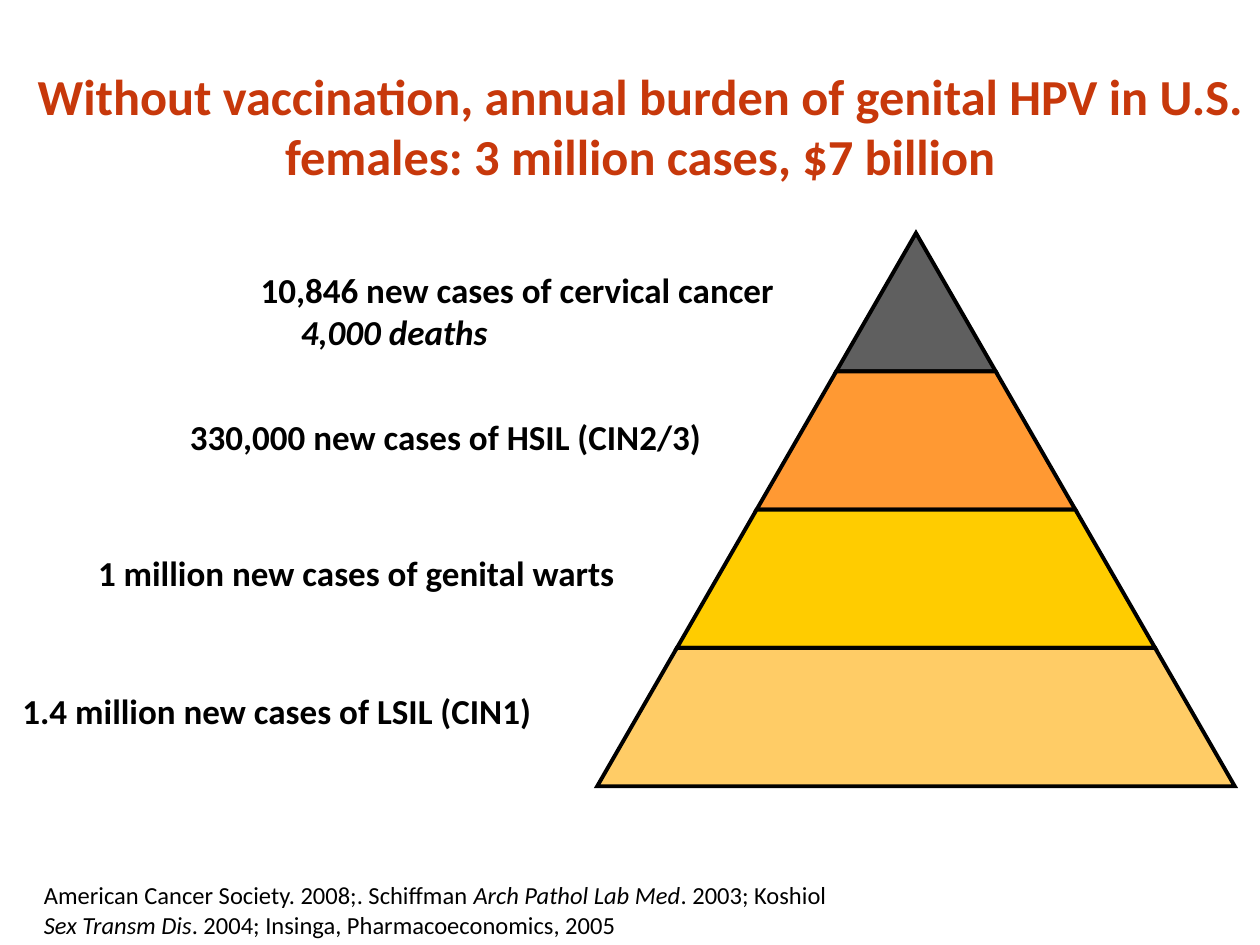
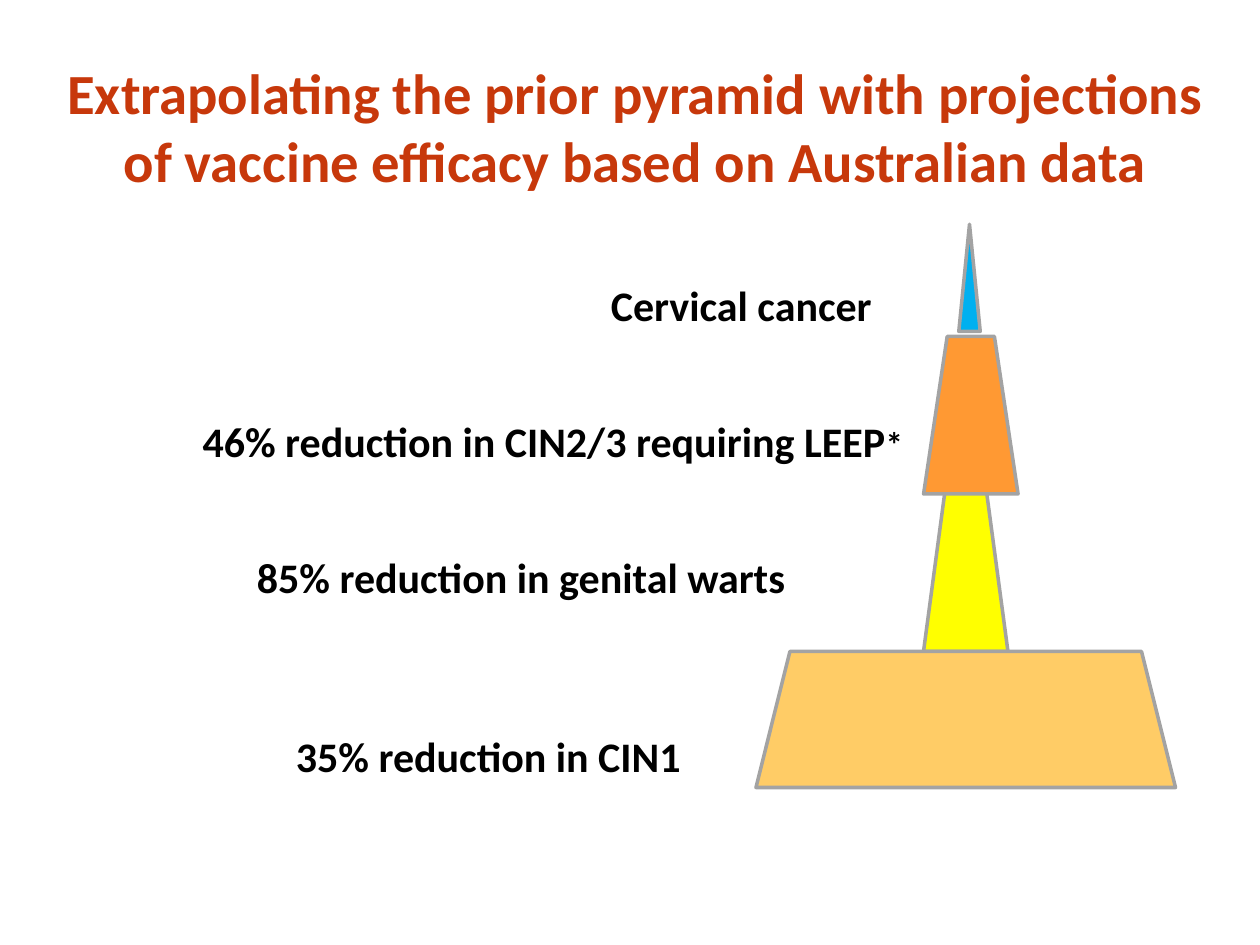
from lxml import etree
from pptx import Presentation
from pptx.dml.color import RGBColor
from pptx.enum.shapes import MSO_SHAPE as Shape
from pptx.enum.text import MSO_ANCHOR as Anchor, PP_ALIGN as Align
from pptx.oxml.ns import qn
from pptx.util import Inches, Pt

TITLE_RED, BLACK, GREY = "C7380B", "000000", "A3A3A3"
ORANGE, TAN = "FF9933", "FFCC66"


def add_text(slide, box, paragraphs, size, color=BLACK, bold=True,
             align=Align.LEFT, anchor=Anchor.TOP):
    frame = slide.shapes.add_textbox(*map(Inches, box)).text_frame
    frame.word_wrap = True
    frame.vertical_anchor = anchor
    for number, runs in enumerate(paragraphs):
        paragraph = frame.add_paragraph() if number else frame.paragraphs[0]
        paragraph.alignment = align
        for text, italic, *own_size in runs:
            run = paragraph.add_run()
            run.text = text
            run.font.name = "Calibri"
            run.font.size = Pt(own_size[0] if own_size else size)
            run.font.bold = bold
            run.font.italic = italic
            run.font.color.rgb = RGBColor.from_string(color)
    return frame


def paint(shape, fill, line, width):
    shape.shadow.inherit = False
    shape.fill.solid()
    shape.fill.fore_color.rgb = RGBColor.from_string(fill)
    shape.line.color.rgb = RGBColor.from_string(line)
    shape.line.width = Pt(width)


deck = Presentation()
deck.slide_width, deck.slide_height = Inches(10), Inches(7.5)

titles = [
    ("Without vaccination, annual burden of genital HPV in U.S. females: "
     "3 million cases, $7 billion", 0.17, 9.83, 28.8),
    ("Extrapolating the prior pyramid with projections of vaccine efficacy "
     "based on Australian data", 0.33, 9.42, 32.4),
]
for title, left, width, size in titles:
    slide = deck.slides.add_slide(deck.slide_layouts[6])
    add_text(slide, (left, 0.75, width, 0.49), [[(title, False)]], size,
             TITLE_RED, align=Align.CENTER, anchor=Anchor.MIDDLE)
burden, projection = deck.slides

citations = add_text(burden, (0.25, 6.97, 9.41, 0.53), [
    [("American Cancer Society. 2008;. Schiffman ", False),
     ("Arch Pathol Lab Med", True), (". 2003; Koshiol", False)],
    [("Sex Transm Dis", True),
     (". 2004; Insinga, Pharmacoeconomics, 2005", False)],
], 14, bold=False, anchor=Anchor.BOTTOM)
for paragraph in citations.paragraphs:
    paragraph.line_spacing = 0.8
citations.paragraphs[1].space_before = Pt(3.5)

cancer = add_text(burden, (1.97, 2.08, 4.31, 0.77), [
    [("10,846 new cases of cervical cancer", False)],
    [("4,000 deaths", True)],
], 20)
deaths = cancer.paragraphs[1]._p.get_or_add_pPr()
deaths.set("marL", str(Inches(0.32)))

burden_labels = [
    ("330,000 new cases of HSIL (CIN2/3)", 1.41, 3.25, 4.84),
    ("1 million new cases of genital warts", 0.68, 4.33, 4.9),
    ("1.4 million new cases of LSIL (CIN1)", 0.08, 5.42, 4.93),
]
for label, left, top, width in burden_labels:
    add_text(burden, (left, top, width, 0.43), [[(label, False)]], 20)

apex_x, apex_y = Inches(7.27), Inches(1.85)
tier_height, half_step = Inches(4.39) // 4, Inches(2.53) // 4
pyramid = burden.shapes.add_group_shape()
for tier, color in enumerate(["5F5F5F", ORANGE, "FFCC00", TAN]):
    top, bottom = apex_y + tier * tier_height, apex_y + (tier + 1) * tier_height
    narrow, wide = tier * half_step, (tier + 1) * half_step
    outline = pyramid.shapes.build_freeform(apex_x - wide, bottom)
    corners = [(apex_x - narrow, top), (apex_x + narrow, top), (apex_x + wide, bottom)]
    outline.add_line_segments(corners if tier else corners[1:], close=True)
    layer = outline.convert_to_shape()
    paint(layer, color, BLACK, 2.25)
    etree.SubElement(layer.line._get_or_add_ln(), qn("a:miter"), lim="800000")

projection_labels = [
    ([("Cervical cancer", False)], 4.75, 2.17, 2.3),
    ([("46% reduction in CIN2/3 requiring LEEP", False), ("*", False, 20)],
     1.51, 3.25, 5.83),
    ([("85% reduction in genital warts", False)], 1.94, 4.33, 4.45),
    ([("35% reduction in CIN1", False)], 2.25, 5.75, 3.29),
]
for runs, left, top, width in projection_labels:
    add_text(projection, (left, top, width, 0.51), [runs], 24)

projection_layers = [
    (Shape.TRAPEZOID, (7.33, 2.67, 0.75, 1.25), ORANGE),
    (Shape.TRAPEZOID, (7.33, 3.92, 0.67, 1.25), "FFFF00"),
    (Shape.TRAPEZOID, (6, 5.17, 3.33, 1.08), TAN),
    (Shape.ISOSCELES_TRIANGLE, (7.61, 1.78, 0.17, 0.85), "00B0F0"),
]
for kind, box, color in projection_layers:
    paint(projection.shapes.add_shape(kind, *map(Inches, box)), color, GREY, 2)

deck.save("out.pptx")
